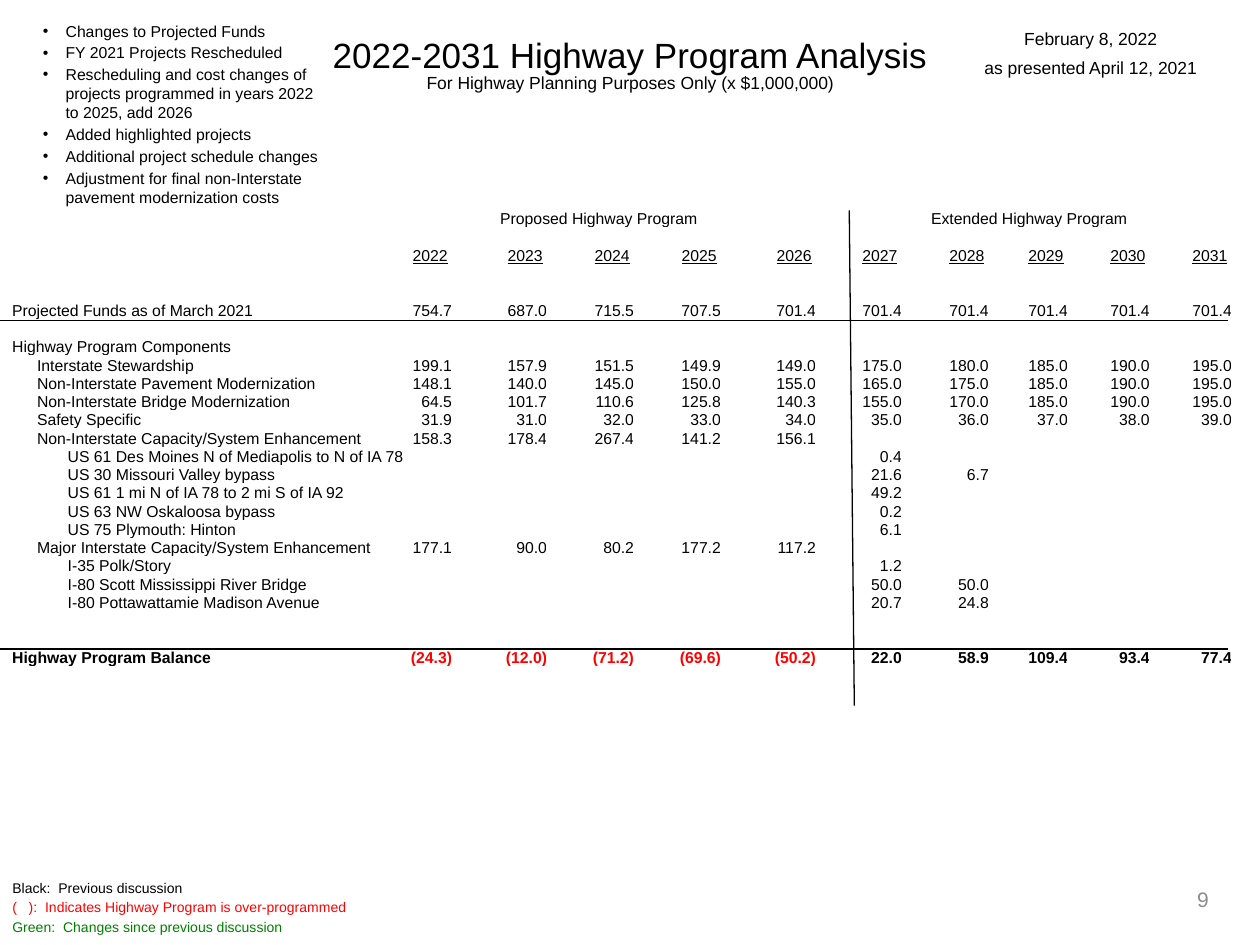
"""Builds the highway program analysis slide."""
from pptx import Presentation
from pptx.dml.color import RGBColor
from pptx.enum import shapes, text
from pptx.oxml import xmlchemy
from pptx.util import Pt

THEME = {
    "font": "Arial",
    "black": RGBColor(0, 0, 0),
    "red": RGBColor(255, 0, 0),
    "green": RGBColor(0, 128, 0),
    "grey": RGBColor(140, 140, 140),
    "title": 20, "subtitle": 10, "body": 9, "legend": 8, "number": 12,
}
TITLE = "2022-2031 Highway Program Analysis"
SUBTITLE = "For Highway Planning Purposes Only (x $1,000,000)"
CHANGES = [
    "Changes to Projected Funds",
    "FY 2021 Projects Rescheduled",
    "Rescheduling and cost changes of projects programmed in years 2022 to 2025, add 2026",
    "Added highlighted projects",
    "Additional project schedule changes",
    "Adjustment for final non-Interstate pavement modernization costs",
]
DATES = ["February 8, 2022", "as presented April 12, 2021"]
LEGEND = [
    ("Black:  Previous discussion", "black"),
    ("(   ):  Indicates Highway Program is over-programmed", "red"),
    ("Green:  Changes since previous discussion", "green"),
]
GROUPS = [("Proposed Highway Program", 1, 5, 0, 14), ("Extended Highway Program", 6, 10, 6, 0)]
YEARS = [str(year) for year in range(2022, 2032)]
PROPOSED, EXTENDED = 0, 5
PROGRAM = [
    ("Projected Funds as of March 2021", 0, 3, PROPOSED,
     "754.7 687.0 715.5 707.5 701.4 701.4 701.4 701.4 701.4 701.4"),
    ("Highway Program Components", 0, 2, PROPOSED, ""),
    ("Interstate Stewardship", 1, 1, PROPOSED,
     "199.1 157.9 151.5 149.9 149.0 175.0 180.0 185.0 190.0 195.0"),
    ("Non-Interstate Pavement Modernization", 1, 1, PROPOSED,
     "148.1 140.0 145.0 150.0 155.0 165.0 175.0 185.0 190.0 195.0"),
    ("Non-Interstate Bridge Modernization", 1, 1, PROPOSED,
     "64.5 101.7 110.6 125.8 140.3 155.0 170.0 185.0 190.0 195.0"),
    ("Safety Specific", 1, 1, PROPOSED, "31.9 31.0 32.0 33.0 34.0 35.0 36.0 37.0 38.0 39.0"),
    ("Non-Interstate Capacity/System Enhancement", 1, 1, PROPOSED, "158.3 178.4 267.4 141.2 156.1"),
    ("US 61 Des Moines N of Mediapolis to N of IA 78", 2, 1, EXTENDED, "0.4"),
    ("US 30 Missouri Valley bypass", 2, 1, EXTENDED, "21.6 6.7"),
    ("US 61 1 mi N of IA 78 to 2 mi S of IA 92", 2, 1, EXTENDED, "49.2"),
    ("US 63 NW Oskaloosa bypass", 2, 1, EXTENDED, "0.2"),
    ("US 75 Plymouth: Hinton", 2, 1, EXTENDED, "6.1"),
    ("Major Interstate Capacity/System Enhancement", 1, 1, PROPOSED, "177.1 90.0 80.2 177.2 117.2"),
    ("I-35 Polk/Story", 2, 1, EXTENDED, "1.2"),
    ("I-80 Scott Mississippi River Bridge", 2, 1, EXTENDED, "50.0 50.0"),
    ("I-80 Pottawattamie Madison Avenue", 2, 1, EXTENDED, "20.7 24.8"),
    ("Highway Program Balance", 0, 3, PROPOSED,
     "(24.3) (12.0) (71.2) (69.6) (50.2) 22.0 58.9 109.4 93.4 77.4"),
]
COLUMN_EDGES = [0, 232, 258.3, 312.6, 362.3, 412, 466.3, 515.4, 565.1, 610.3, 657.1, 704]
LABEL_INSETS = [7, 21.2, 38.7]
TABLE_TOP, ROW_PITCH = 120, 10.45
RULES = [(0, 183, 701.5, 183), (488.2, 403.2, 485.3, 120.2), (0, 370.8, 701.5, 370.8)]
ALIGN = text.PP_ALIGN


def style(paragraph, size, color="black", align=ALIGN.LEFT, before=0, spacing=1.0):
    font = paragraph.font
    font.name, font.size = THEME["font"], Pt(size)
    font.color.rgb = THEME[color]
    paragraph.alignment = align
    paragraph.space_before = Pt(before)
    paragraph.line_spacing = spacing


def place(shape, left, top, width, height):
    shape.left, shape.top, shape.width, shape.height = map(Pt, (left, top, width, height))


def write(shape, entries, size, align=ALIGN.LEFT, before=0):
    frame = shape.text_frame
    frame.word_wrap = True
    frame.text = "\n".join(words for words, color in entries)
    for paragraph, (words, color) in zip(frame.paragraphs, entries):
        style(paragraph, size, color, align, before)


def add_text(slide, box, entries, size, **options):
    shape = slide.shapes.add_textbox(*map(Pt, box))
    write(shape, entries, size, **options)
    return shape


def fill_title(shape):
    place(shape, 0, 3.6, 720, 50.4)
    frame = shape.text_frame
    frame.text = TITLE + "\n" + SUBTITLE
    frame.vertical_anchor = text.MSO_ANCHOR.BOTTOM
    frame.auto_size = text.MSO_AUTO_SIZE.NONE
    frame.margin_top, frame.margin_bottom = 0, Pt(1)
    for paragraph, size in zip(frame.paragraphs, (THEME["title"], THEME["subtitle"])):
        style(paragraph, size, align=ALIGN.CENTER, spacing=Pt(size))


def fill_changes(shape):
    place(shape, 17.3, 8.6, 177.8, 142.6)
    write(shape, [(change, "black") for change in CHANGES], THEME["body"], before=1.7)
    shape.text_frame.auto_size = text.MSO_AUTO_SIZE.NONE
    for paragraph in shape.text_frame.paragraphs:
        paragraph.line_spacing = Pt(10.8)
        properties = paragraph._p.get_or_add_pPr()
        properties.set("marL", str(Pt(13)))
        properties.set("indent", str(-Pt(13)))


def fill_cell(cell, words, align=ALIGN.RIGHT, left=0, right=0):
    cell.text = words
    cell.fill.background()
    cell.vertical_anchor = text.MSO_ANCHOR.BOTTOM
    cell.margin_top = cell.margin_bottom = 0
    cell.margin_left, cell.margin_right = Pt(left), Pt(right)
    paragraph = cell.text_frame.paragraphs[0]
    style(paragraph, THEME["body"], "red" if words.startswith("(") else "black", align)
    if not words:
        paragraph._p.get_or_add_endParaRPr().set("sz", str(THEME["body"] * 100))
    return paragraph.font


def add_program_table(slide):
    heights = [ROW_PITCH * pitches for pitches in [1, 2] + [row[2] for row in PROGRAM]]
    columns = len(COLUMN_EDGES) - 1
    table = slide.shapes.add_table(len(heights), columns, 0, Pt(TABLE_TOP),
                                   Pt(COLUMN_EDGES[-1]), Pt(sum(heights))).table
    table.first_row = table.horz_banding = False
    for row, height in zip(table.rows, heights):
        row.height = Pt(height)
    for column, left, right in zip(table.columns, COLUMN_EDGES, COLUMN_EDGES[1:]):
        column.width = Pt(right - left)
    for column in range(columns):
        fill_cell(table.cell(0, column), "")
    for words, first, last, left, right in GROUPS:
        table.cell(0, first).merge(table.cell(0, last))
        fill_cell(table.cell(0, first), words, ALIGN.CENTER, left, right)
    fill_cell(table.cell(1, 0), "")
    for column, year in enumerate(YEARS, 1):
        fill_cell(table.cell(1, column), year, right=2.5).underline = True
    for row, (label, level, pitches, start, values) in enumerate(PROGRAM, 2):
        cells = [""] * start + values.split()
        cells += [""] * (len(YEARS) - len(cells))
        fonts = [fill_cell(table.cell(row, 0), label, ALIGN.LEFT, LABEL_INSETS[level])]
        fonts += [fill_cell(table.cell(row, column), value) for column, value in enumerate(cells, 1)]
        for font in fonts:
            font.bold = row == len(heights) - 1


def add_rule(slide, ends):
    rule = slide.shapes.add_connector(shapes.MSO_CONNECTOR.STRAIGHT, *map(Pt, ends))
    rule.line.color.rgb = THEME["black"]
    rule.line.width = Pt(0.75)
    properties = rule._element.spPr
    properties.append(xmlchemy.OxmlElement("a:effectLst"))


def main():
    presentation = Presentation()
    presentation.slide_width, presentation.slide_height = Pt(720), Pt(540)
    slide = presentation.slides.add_slide(presentation.slide_layouts[1])
    add_program_table(slide)
    fill_title(slide.shapes.title)
    for ends in RULES:
        add_rule(slide, ends)
    number = add_text(slide, (530, 499.7, 167.8, 28.8), [("9", "grey")], THEME["number"],
                      align=ALIGN.RIGHT)
    number.text_frame.vertical_anchor = text.MSO_ANCHOR.MIDDLE
    add_text(slide, (0, 499, 275.8, 40.3), LEGEND, THEME["legend"], before=1.6)
    add_text(slide, (542.9, 12.2, 160.6, 37.4), [(date, "black") for date in DATES],
             THEME["subtitle"], align=ALIGN.CENTER, before=5)
    fill_changes(slide.placeholders[1])
    presentation.save("out.pptx")


if __name__ == "__main__":
    main()
